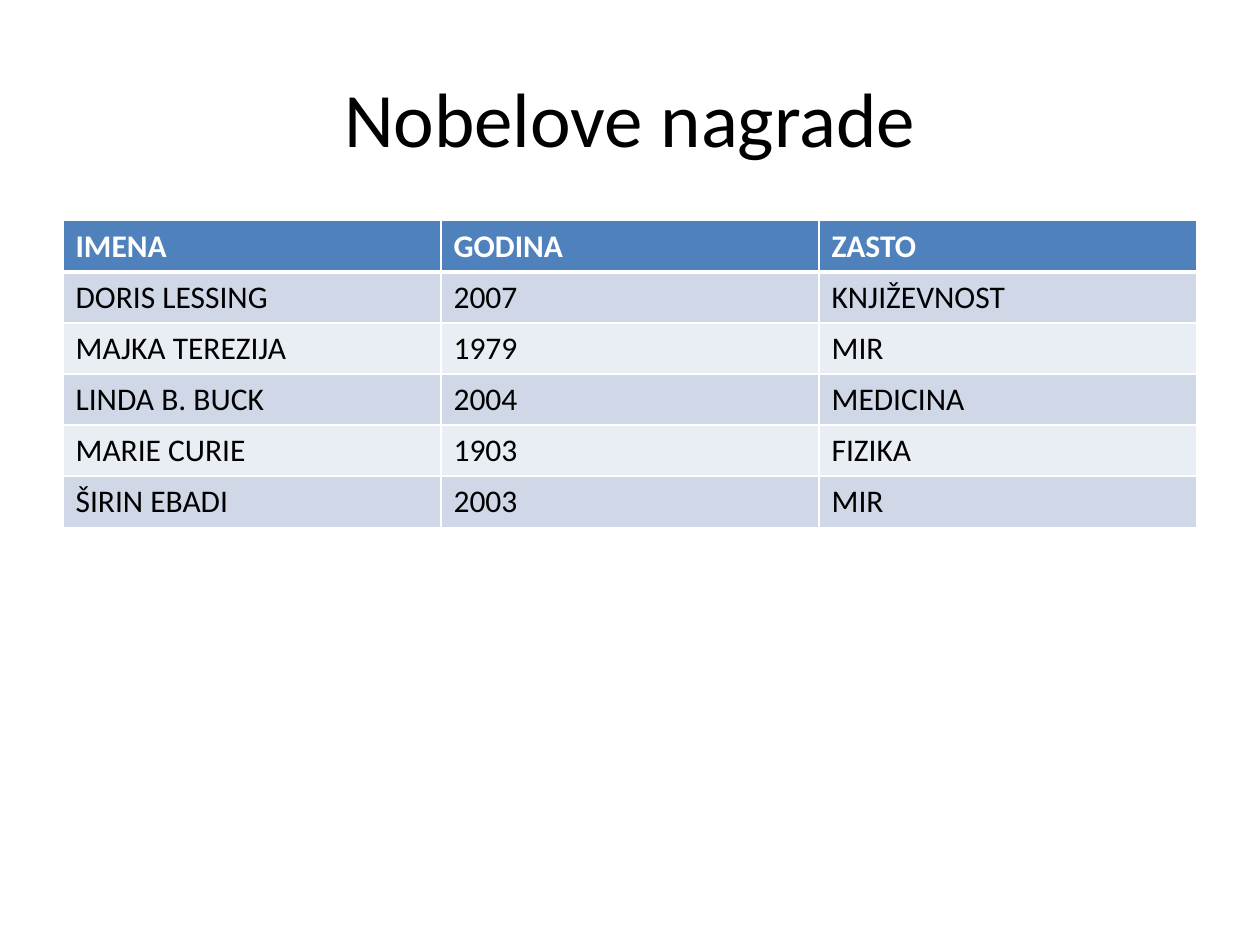
from lxml import etree
from pptx import Presentation
from pptx import util as u
from pptx.dml import color
from pptx.enum import text
from pptx.oxml import ns

TITLE = "Nobelove nagrade"
HEADER = ("IMENA", "GODINA", "ZASTO")
WINNERS = [
    ("DORIS LESSING", "2007", "KNJIŽEVNOST"),
    ("MAJKA TEREZIJA", "1979", "MIR"),
    ("LINDA B. BUCK", "2004", "MEDICINA"),
    ("MARIE CURIE", "1903", "FIZIKA"),
    ("ŠIRIN EBADI", "2003", "MIR"),
]
HEADER_FILL, BAND_FILLS = "4F81BD", ("D0D8E8", "E9EDF4")
BLACK, WHITE = "000000", "FFFFFF"
LEFT, WIDTH = u.Cm(1.27), u.Cm(22.86)
ROW_HEIGHT = u.Cm(1.03)


def rgb(value):
    return color.RGBColor.from_string(value)


def write(frame, content, size, tint, bold=False):
    paragraph = frame.paragraphs[0]
    paragraph.text = content
    font = paragraph.font
    font.name, font.size, font.bold = "Calibri", u.Pt(size), bold
    font.color.rgb = rgb(tint)
    return paragraph


def add_borders(cell, bottom_width):
    properties = cell._tc.get_or_add_tcPr()
    widths = {"lnL": 1, "lnR": 1, "lnT": 1, "lnB": bottom_width}
    for position, (side, width) in enumerate(widths.items()):
        line = etree.Element(ns.qn(f"a:{side}"), w=str(u.Pt(width)))
        fill = etree.SubElement(line, ns.qn("a:solidFill"))
        etree.SubElement(fill, ns.qn("a:srgbClr"), val=WHITE)
        properties.insert(position, line)


def add_title(slide):
    shape = slide.shapes.add_textbox(LEFT, u.Cm(0.76), WIDTH, u.Cm(3.18))
    frame = shape.text_frame
    frame.word_wrap = True
    frame.vertical_anchor = text.MSO_ANCHOR.MIDDLE
    write(frame, TITLE, 44, BLACK).alignment = text.PP_ALIGN.CENTER


def add_winners(slide):
    rows = [HEADER, *WINNERS]
    table = slide.shapes.add_table(
        len(rows), len(HEADER), LEFT, u.Cm(4.45), WIDTH, ROW_HEIGHT * len(rows)
    ).table
    for row_index, row in enumerate(rows):
        is_header = row_index == 0
        fill = HEADER_FILL if is_header else BAND_FILLS[(row_index - 1) % 2]
        for column_index, content in enumerate(row):
            cell = table.cell(row_index, column_index)
            write(cell.text_frame, content, 18, WHITE if is_header else BLACK, is_header)
            cell.fill.solid()
            cell.fill.fore_color.rgb = rgb(fill)
            add_borders(cell, 3 if is_header else 1)


def main():
    """Build the slide with the table of Nobel prizes."""
    presentation = Presentation()
    presentation.slide_width, presentation.slide_height = u.Cm(25.4), u.Cm(19.05)
    slide = presentation.slides.add_slide(presentation.slide_layouts[6])
    add_title(slide)
    add_winners(slide)
    presentation.save("out.pptx")


if __name__ == "__main__":
    main()
